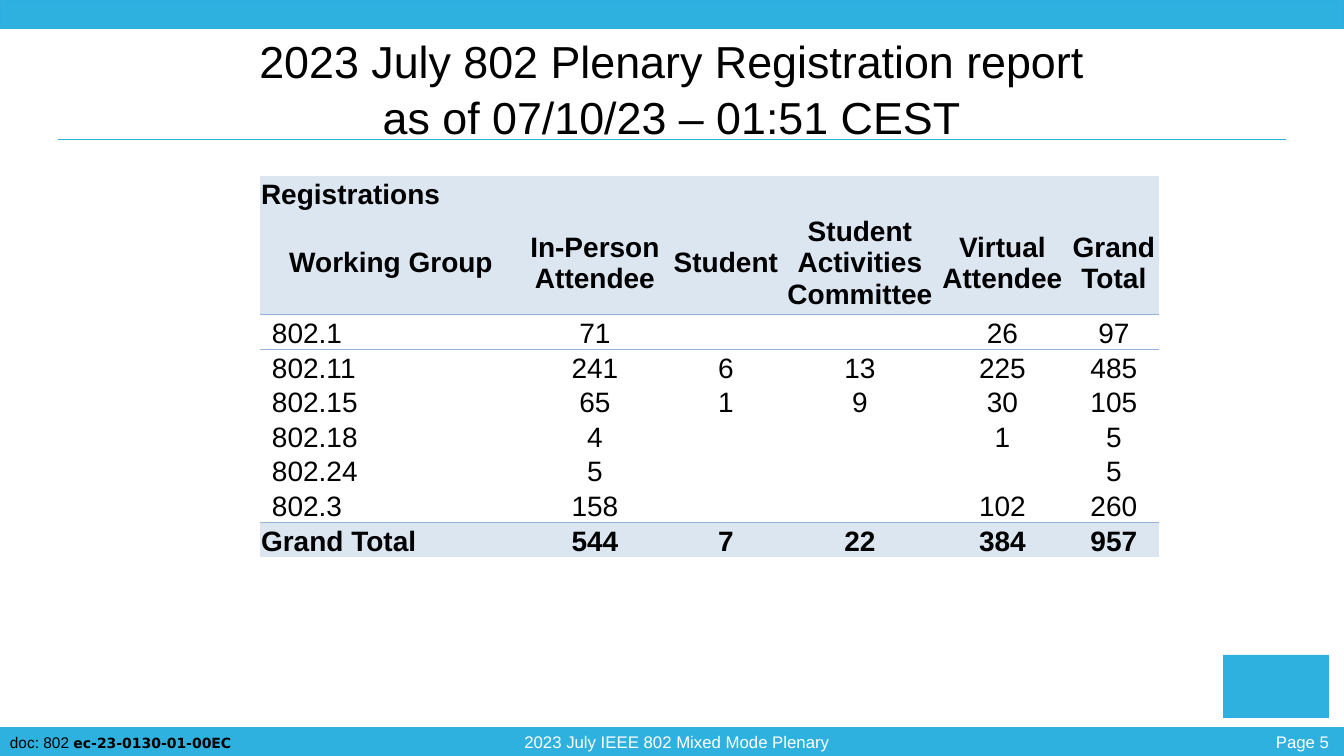
import pptx
import pptx.dml.color
import pptx.enum.shapes
import pptx.enum.text
import pptx.oxml
import pptx.oxml.ns
import pptx.oxml.xmlchemy
import pptx.util

SHAPE = pptx.enum.shapes.MSO_SHAPE
ALIGN = pptx.enum.text.PP_ALIGN
ANCHOR = pptx.enum.text.MSO_ANCHOR
WIDTH, HEIGHT = 1344, 756
BLUE, RULE_BLUE, TINT, BORDER = "2FB1DF", "2FADDF", "DCE6F1", "95B3D7"
NO_GRID_STYLE = "{2D5ABB26-0587-4C30-8999-92F81FD0307C}"

COLUMNS = [262, 146, 116, 152, 133, 90]
ROWS = [
    ["Registrations", "", "", "", "", ""],
    ["Working Group", "In-Person Attendee", "Student",
     "Student Activities Committee", "Virtual Attendee", "Grand Total"],
    ["802.1", "71", "", "", "26", "97"],
    ["802.11", "241", "6", "13", "225", "485"],
    ["802.15", "65", "1", "9", "30", "105"],
    ["802.18", "4", "", "", "1", "5"],
    ["802.24", "5", "", "", "", "5"],
    ["802.3", "158", "", "", "102", "260"],
    ["Grand Total", "544", "7", "22", "384", "957"],
]
HEADER, TOTAL = 1, len(ROWS) - 1


def px(n):
    """Turn slide pixels into EMU."""
    return pptx.util.Emu(round(n * 914400 / 100.8))


def rgb(code):
    """Turn a hex string into a colour."""
    return pptx.dml.color.RGBColor.from_string(code)


def write(p, text, size=12, color="000000", font="Arial", bold=False, align=None):
    """Add formatted text to a paragraph, breaking at line ends."""
    if align is not None:
        p.alignment = align
    for i, line in enumerate(text.splitlines()):
        if i:
            p.add_line_break()
        r = p.add_run()
        r.text = line
        r.font.size = pptx.util.Pt(size)
        r.font.name = font
        r.font.bold = bold
        r.font.color.rgb = rgb(color)


def add_rect(slide, x, y, w, h, line=None):
    """Add a plain blue rectangle."""
    sp = slide.shapes.add_shape(SHAPE.RECTANGLE, px(x), px(y), px(w), px(h))
    sp.shadow.inherit = False
    sp.fill.solid()
    sp.fill.fore_color.rgb = rgb(BLUE)
    if line:
        sp.line.color.rgb = rgb(line)
        sp.line.width = pptx.util.Pt(0.75)
    else:
        sp.line.fill.background()


def add_label(slide, x, y, w, h):
    """Add a wrapping text box and return its paragraph."""
    tf = slide.shapes.add_textbox(px(x), px(y), px(w), px(h)).text_frame
    tf.word_wrap = True
    tf.auto_size = pptx.enum.text.MSO_AUTO_SIZE.SHAPE_TO_FIT_TEXT
    return tf.paragraphs[0]


def add_header(slide, x, y, w):
    """Draw the top band, the title and the rule below it."""
    add_rect(slide, x, y, w, 29, RULE_BLUE)
    rule = slide.shapes.add_connector(
        pptx.enum.shapes.MSO_CONNECTOR.STRAIGHT,
        px(x + 58), px(y + 140), px(x + w - 58), px(y + 140))
    rule.line.color.rgb = rgb(RULE_BLUE)
    rule.line.width = pptx.util.Pt(0.75)
    rule._element.spPr.append(pptx.oxml.xmlchemy.OxmlElement("a:effectLst"))
    title = slide.shapes.title
    title.left, title.top = px(x + 67), px(y + 42)
    title.width, title.height = px(w - 134), px(90)
    tf = title.text_frame
    tf.word_wrap = True
    tf.auto_size = pptx.enum.text.MSO_AUTO_SIZE.NONE
    tf.vertical_anchor = ANCHOR.MIDDLE
    p = tf.paragraphs[0]
    p.line_spacing = 1.05
    write(p, """2023 July 802 Plenary Registration report
as of 07/10/23 – 01:51 CEST""", size=32, align=ALIGN.CENTER)


def add_footer(slide, x, y, w, h):
    """Draw the bottom band with its three labels and the badge above it."""
    add_rect(slide, x, y, w, h, BLUE)
    add_rect(slide, x + w - 121, y - 73, 106, 63)
    write(add_label(slide, x + w - 175, y - 1, 170, 30), "Page 5",
          color="FFFFFF", align=ALIGN.RIGHT)
    write(add_label(slide, x + 5, y - 1, w, 30),
          "2023 July IEEE 802 Mixed Mode Plenary",
          color="FFFFFF", align=ALIGN.CENTER)
    p = add_label(slide, x, y, 336, 29)
    write(p, "doc: 802 ", size=11)
    write(p, "ec-23-0130-01-00EC", size=10, font="DejaVu Sans", bold=True)


def add_border(cell, side):
    """Put a thin line on one side of a cell."""
    ln = pptx.oxml.parse_xml(
        f'<a:{side} {pptx.oxml.ns.nsdecls("a")} w="6350"><a:solidFill>'
        f'<a:srgbClr val="{BORDER}"/></a:solidFill></a:{side}>')
    cell._tc.get_or_add_tcPr().insert(0, ln)


def format_cell(cell, text, row, col):
    """Fill, align and write one cell according to its place."""
    shaded = row <= HEADER or row == TOTAL
    if shaded:
        cell.fill.solid()
        cell.fill.fore_color.rgb = rgb(TINT)
    else:
        cell.fill.background()
    cell.margin_left = px(1 if shaded or col else 12)
    cell.margin_right = cell.margin_top = px(1)
    cell.margin_bottom = 0
    cell.vertical_anchor = ANCHOR.MIDDLE if row == HEADER else ANCHOR.BOTTOM
    if row in (HEADER, TOTAL - 1):
        add_border(cell, "lnB")
    elif row in (HEADER + 1, TOTAL):
        add_border(cell, "lnT")
    centred = col > 0 or row == HEADER
    write(cell.text_frame.paragraphs[0], text, size=20, bold=shaded,
          align=ALIGN.CENTER if centred else ALIGN.LEFT)


def add_registrations(slide, x, y, row_h, header_h):
    """Add the table of registrations by working group."""
    heights = [header_h if i == HEADER else row_h for i in range(len(ROWS))]
    table = slide.shapes.add_table(len(ROWS), len(COLUMNS), px(x), px(y),
                                   px(sum(COLUMNS)), px(sum(heights))).table
    table.first_row = table.horz_banding = False
    style = table._tbl.tblPr.find(pptx.oxml.ns.qn("a:tableStyleId"))
    style.text = NO_GRID_STYLE
    for column, w in zip(table.columns, COLUMNS):
        column.width = px(w)
    for i, (values, h) in enumerate(zip(ROWS, heights)):
        table.rows[i].height = px(h)
        for j, text in enumerate(values):
            format_cell(table.cell(i, j), text, i, j)
    table.cell(0, 1).merge(table.cell(0, 2))


def main():
    """Build and save the slide."""
    prs = pptx.Presentation()
    prs.slide_width, prs.slide_height = px(WIDTH), px(HEIGHT)
    slide = prs.slides.add_slide(prs.slide_layouts[5])
    add_header(slide, 0, 0, WIDTH)
    add_footer(slide, 0, HEIGHT - 28, WIDTH, 28)
    add_registrations(slide, 260, 176, 34, 104)
    prs.save("out.pptx")


if __name__ == "__main__":
    main()
